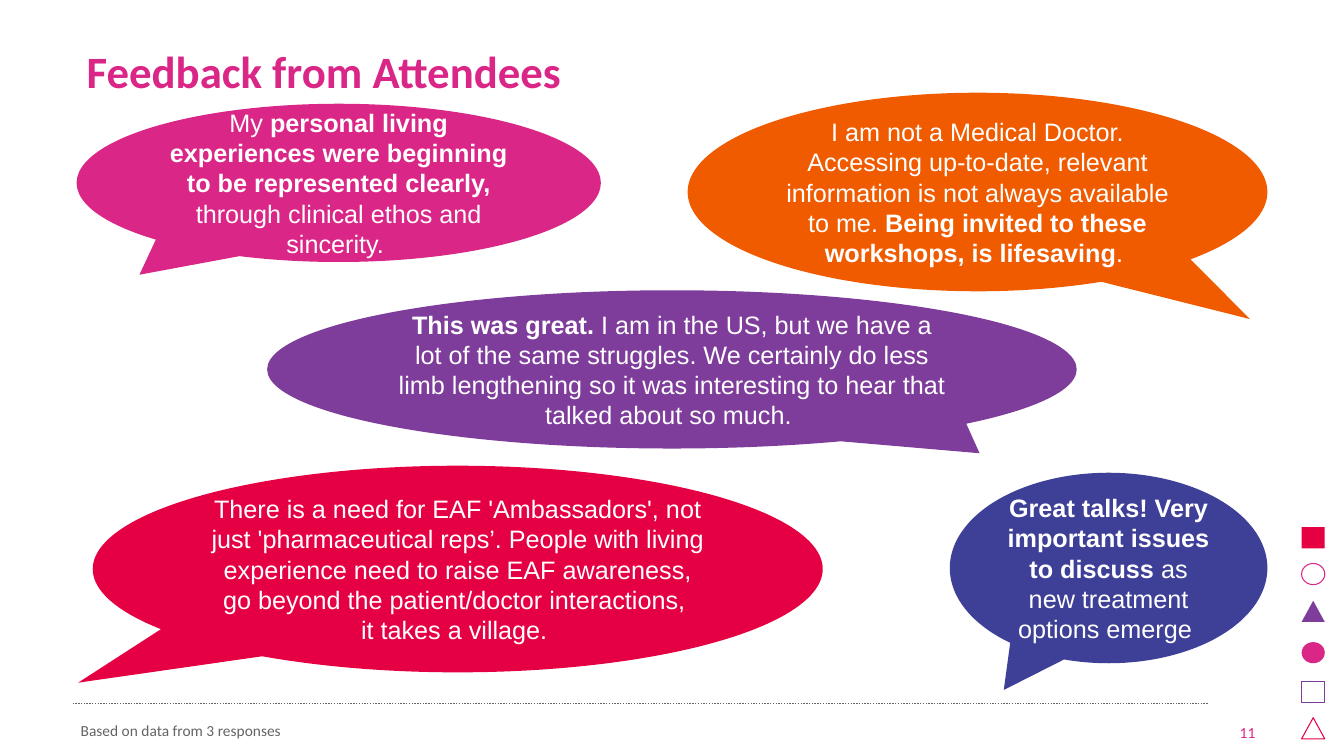
import pptx
import pptx.util
import pptx.dml.color
import pptx.enum.dml
import pptx.enum.shapes
import pptx.enum.text
import pptx.oxml.ns
import lxml.etree

RGBColor = pptx.dml.color.RGBColor
Shape = pptx.enum.shapes.MSO_SHAPE
Align = pptx.enum.text.PP_ALIGN
Anchor = pptx.enum.text.MSO_ANCHOR

PINK = RGBColor(0xDA, 0x26, 0x86)
RED = RGBColor(0xE5, 0x00, 0x43)
PURPLE = RGBColor(0x7E, 0x3C, 0x9B)
ORANGE = RGBColor(0xF0, 0x5B, 0x00)
BLUE = RGBColor(0x3E, 0x3F, 0x96)
GREY = RGBColor(0x64, 0x64, 0x64)
WHITE = RGBColor(0xFF, 0xFF, 0xFF)

EMU_PER_PX = 9144  # 100 px to the inch
SLIDE_SIZE = (1333, 750)

TITLE = "Feedback from Attendees"
FOOTNOTE = "Based on data from 3 responses"
PAGE_NUMBER = "11"

# box, tail tip as a share of the box from its centre, colour, (text, bold) runs
QUOTES = [
    ((76, 103, 520, 157), (-0.38, 0.58), PINK, [
        ("My ", False),
        ("personal living experiences were beginning to be represented clearly, ", True),
        ("through clinical ethos and sincerity. ", False)]),
    ((682, 92, 575, 197), (0.47, 0.64), ORANGE, [
        ("I am not a Medical Doctor. Accessing up-to-date, relevant information "
         "is not always available to me. ", False),
        ("Being invited to these workshops, is lifesaving", True),
        (". ", False)]),
    ((92, 462, 724, 205), (-0.52, 0.55), RED, [
        ("There is a need for EAF 'Ambassadors', not just 'pharmaceutical reps’. "
         "People with living experience need to raise EAF awareness, "
         "go beyond the patient/doctor interactions, \nit takes a village. ", False)]),
    ((265, 288, 803, 157), (0.38, 0.53), PURPLE, [
        ("This was great. ", True),
        ("I am in the US, but we have a lot of the same struggles. We certainly do "
         "less limb lengthening so it was interesting to hear that talked about "
         "so much. ", False)]),
    ((942, 469, 315, 189), (-0.33, 0.64), BLUE, [
        ("Great talks! Very important issues to discuss ", True),
        ("as new treatment options emerge ", False)]),
]

ICON_LEFT, ICON_WIDTH, ICON_HEIGHT = 1291, 23, 21
# top, shape, colour, filled
ICONS = [
    (523, Shape.RECTANGLE, RED, True),
    (559, Shape.OVAL, PINK, False),
    (596, Shape.ISOSCELES_TRIANGLE, PURPLE, True),
    (637, Shape.OVAL, PINK, True),
    (676, Shape.RECTANGLE, PURPLE, False),
    (712, Shape.ISOSCELES_TRIANGLE, RED, False),
]


def emu(*lengths):
    return [length * EMU_PER_PX for length in lengths]


def add_run(paragraph, text, font_name, size, color, bold=False):
    """Add text as a run; each newline in it becomes a line break."""
    for index, line in enumerate(text.split("\n")):
        if index:
            paragraph.add_line_break()
        run = paragraph.add_run()
        run.text = line
        run.font.name = font_name
        run.font.size = pptx.util.Pt(size)
        run.font.bold = bold
        run.font.color.rgb = color


def fill_text_box(shape, box, anchor, align, text, size, color, bold=False):
    shape.left, shape.top, shape.width, shape.height = emu(*box)
    frame = shape.text_frame
    frame.word_wrap = True
    frame.auto_size = pptx.enum.text.MSO_AUTO_SIZE.NONE
    frame.vertical_anchor = anchor
    paragraph = frame.paragraphs[0]
    paragraph.alignment = align
    add_run(paragraph, text, "Calibri", size, color, bold)
    return paragraph


def add_icon(slide, top, kind, color, filled):
    icon = slide.shapes.add_shape(kind, *emu(ICON_LEFT, top, ICON_WIDTH, ICON_HEIGHT))
    icon.shadow.inherit = False
    if filled:
        icon.fill.solid()
        icon.fill.fore_color.rgb = color
        icon.line.fill.background()
    else:
        icon.fill.background()
        icon.line.color.rgb = color
        icon.line.width = pptx.util.Pt(0.75)


def add_quote(slide, box, tail, color, runs):
    bubble = slide.shapes.add_shape(Shape.OVAL_CALLOUT, *emu(*box))
    bubble.shadow.inherit = False
    bubble.adjustments[0], bubble.adjustments[1] = tail
    bubble.fill.solid()
    bubble.fill.fore_color.rgb = color
    bubble.line.fill.background()
    frame = bubble.text_frame
    frame.word_wrap = True
    frame.vertical_anchor = Anchor.MIDDLE
    paragraph = frame.paragraphs[0]
    paragraph.alignment = Align.CENTER
    for text, bold in runs:
        add_run(paragraph, text, "Arial", 18, WHITE, bold)


def add_dotted_rule(slide):
    rule = slide.shapes.add_connector(
        pptx.enum.shapes.MSO_CONNECTOR.STRAIGHT, *emu(72, 698, 1199, 698))
    rule.line.color.rgb = GREY
    rule.line.width = pptx.util.Pt(1)
    rule.line.dash_style = pptx.enum.dml.MSO_LINE.ROUND_DOT
    lxml.etree.SubElement(rule.element.spPr, pptx.oxml.ns.qn("a:effectLst"))


def main():
    presentation = pptx.Presentation()
    presentation.slide_width, presentation.slide_height = emu(*SLIDE_SIZE)
    slide = presentation.slides.add_slide(presentation.slide_layouts[1])

    for icon in ICONS:
        add_icon(slide, *icon)
    add_dotted_rule(slide)

    title = fill_text_box(slide.shapes.title, (76, 17, 1181, 112),
                          Anchor.MIDDLE, Align.LEFT, TITLE, 32, PINK, True)
    title.line_spacing = 0.9

    footnote = fill_text_box(slide.placeholders[1], (70, 694, 1126, 45),
                             Anchor.BOTTOM, Align.LEFT, FOOTNOTE, 11, GREY)
    footnote.space_before = pptx.util.Pt(6)
    properties = footnote._p.get_or_add_pPr()
    properties.set("marL", "0")
    properties.set("indent", "0")
    lxml.etree.SubElement(properties, pptx.oxml.ns.qn("a:buNone"))

    number_box = (1212, 701, 43, 40)
    fill_text_box(slide.shapes.add_textbox(*emu(*number_box)), number_box,
                  Anchor.BOTTOM, Align.RIGHT, PAGE_NUMBER, 11, PINK)

    for quote in QUOTES:
        add_quote(slide, *quote)
    presentation.save("out.pptx")


if __name__ == "__main__":
    main()
